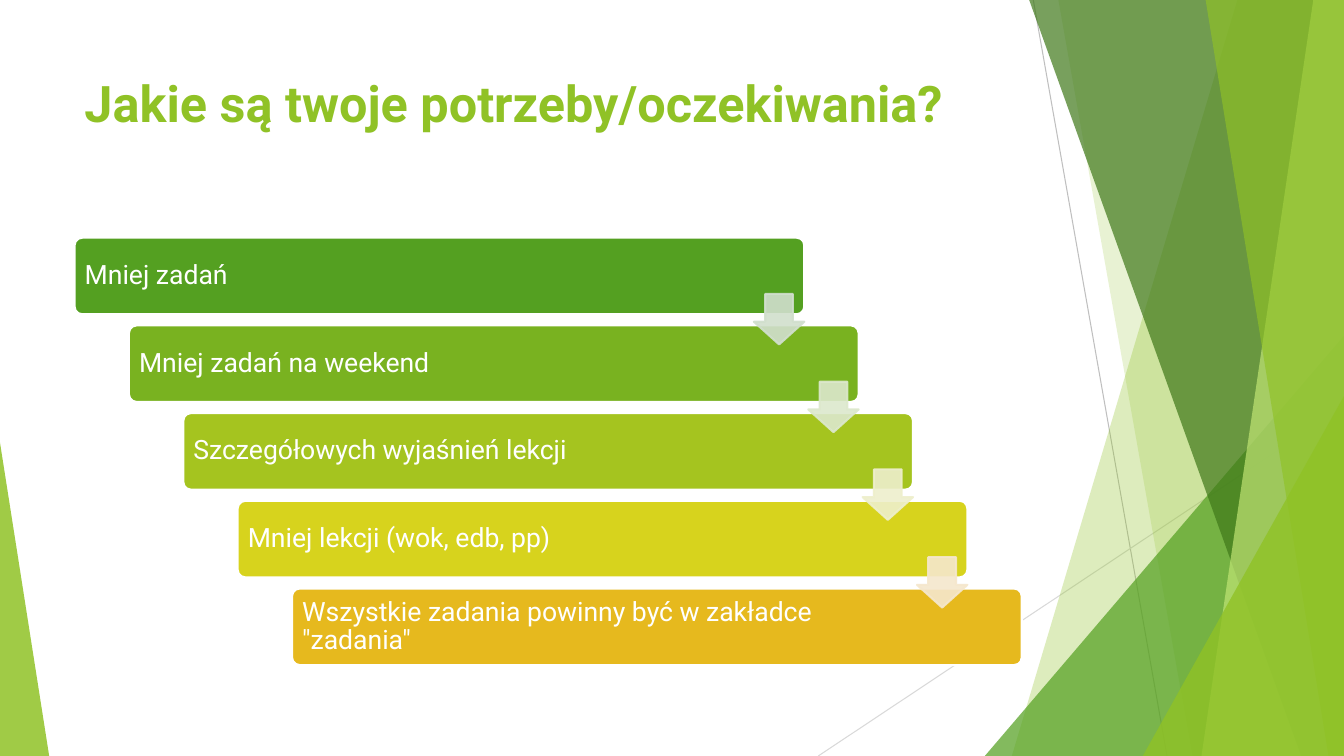
from pptx import Presentation
from pptx.dml.color import RGBColor as RGB
from pptx.enum.shapes import MSO_CONNECTOR as CONN, MSO_SHAPE as SHAPE
from pptx.enum.text import MSO_ANCHOR as ANCHOR, PP_ALIGN as ALIGN
from pptx.oxml.ns import qn
from pptx.util import Cm, Pt
from lxml.etree import SubElement

COLORS = {
    "white": "FFFFFF", "lime": "90C226", "green": "54A021",
    "forest": "3F7819", "pale": "C0E474",
    "grey": "BFBFBF", "light_grey": "D9D9D9",
}
WIDTH, HEIGHT = 33.87, 19.05
STEP_X, STEP_Y = 1.37, 2.21

STEPS = [
    ("Mniej zadań", "54A021"),
    ("Mniej zadań na weekend", "79B220"),
    ("Szczegółowych wyjaśnień lekcji", "A5C41F"),
    ("Mniej lekcji (wok, edb, pp)", "D7D31D"),
    ('Wszystkie zadania powinny być w zakładce "zadania"', "E6B91E"),
]
ARROWS = ["D1DFCD", "DCE8CC", "EEEFCC", "F5E7CD"]


class SlideBuilder:
    font = "Roboto"

    def __init__(self, slide):
        self.shapes = slide.shapes

    def color(self, name):
        return RGB.from_string(COLORS.get(name, name))

    def paint(self, sp, fill, line=None, opacity=100):
        sp.shadow.inherit = False
        sp.fill.solid()
        sp.fill.fore_color.rgb = self.color(fill)
        if line:
            sp.line.color.rgb = self.color(line)
            sp.line.width = Pt(1.5)
        else:
            sp.line.fill.background()
        if opacity < 100:
            for clr in sp._element.spPr.iter(qn("a:srgbClr")):
                SubElement(clr, qn("a:alpha")).set("val", str(opacity * 1000))

    def set_text(self, sp, text, size, color, bold=False):
        tf = sp.text_frame
        tf.word_wrap = True
        p = tf.paragraphs[0]
        p.text = text
        p.alignment = ALIGN.LEFT
        p.font.name, p.font.size, p.font.bold = self.font, Pt(size), bold
        p.font.color.rgb = self.color(color)
        return tf, p

    def line(self, x1, y1, x2, y2, color):
        cn = self.shapes.add_connector(CONN.STRAIGHT, Cm(x1), Cm(y1), Cm(x2), Cm(y2))
        cn.line.color.rgb = self.color(color)
        cn.line.width = Pt(0.75)
        SubElement(cn._element.spPr, qn("a:effectLst"))

    def panel(self, top_x, bottom_x, color, opacity):
        corners = [(top_x, -0.02), (WIDTH, -0.02), (WIDTH, HEIGHT), (bottom_x, HEIGHT)]
        start, *rest = [(Cm(x), Cm(y)) for x, y in corners]
        fb = self.shapes.build_freeform(*start)
        fb.add_line_segments(rest, close=True)
        self.paint(fb.convert_to_shape(), color, opacity=opacity)

    def shape(self, kind, x, y, w, h, adjustments, fill, line=None, opacity=100):
        sp = self.shapes.add_shape(kind, Cm(x), Cm(y), Cm(w), Cm(h))
        for i, value in enumerate(adjustments):
            sp.adjustments[i] = value
        self.paint(sp, fill, line, opacity)
        return sp

    def triangle(self, x, top, width, apex, color, opacity):
        self.shape(SHAPE.ISOSCELES_TRIANGLE, x, top, width, HEIGHT - top,
                   [apex], color, opacity=opacity)

    def title(self, text):
        sp = self.shapes.add_textbox(Cm(1.88), Cm(1.7), Cm(23.88), Cm(3.66))
        self.set_text(sp, text, 36, "lime", bold=True)

    def step(self, x, y, text, color):
        sp = self.shape(SHAPE.ROUNDED_RECTANGLE, x, y, 18.39, 1.93, [0.1], color, "white")
        tf, p = self.set_text(sp, text, 19, "white")
        tf.vertical_anchor = ANCHOR.MIDDLE
        tf.margin_left = tf.margin_top = tf.margin_bottom = Cm(0.2)
        tf.margin_right = Cm(2.84)
        p.line_spacing = 0.9

    def arrow(self, x, y, color):
        self.shape(SHAPE.DOWN_ARROW, x, y, 1.27, 1.27, [0.55, 0.45], color, color, 90)


def main():
    prs = Presentation()
    prs.slide_width, prs.slide_height = Cm(WIDTH), Cm(HEIGHT)
    s = SlideBuilder(prs.slides.add_slide(prs.slide_layouts[6]))

    s.line(26.04, 0, 29.41, HEIGHT, "grey")
    s.line(WIDTH, 10.24, 20.62, HEIGHT, "light_grey")
    s.panel(31.19, 25.5, "lime", 30)
    s.panel(26.67, 30.05, "lime", 20)
    s.triangle(24.82, 8.46, 9.05, 1, "green", 72)
    s.panel(25.93, 32.79, "forest", 70)
    s.panel(33.1, 30.28, "pale", 70)
    s.panel(30.38, 33.48, "lime", 65)
    s.triangle(28.8, 9.98, 5.07, 1, "lime", 80)
    s.triangle(0, 11.15, 1.24, 0, "lime", 85)

    s.title("Jakie są twoje potrzeby/oczekiwania?")
    for i, (text, color) in enumerate(STEPS):
        s.step(1.88 + i * STEP_X, 5.99 + i * STEP_Y, text, color)
    for i, color in enumerate(ARROWS):
        s.arrow(19 + i * STEP_X, 7.41 + i * STEP_Y, color)

    prs.save("out.pptx")


if __name__ == "__main__":
    main()
